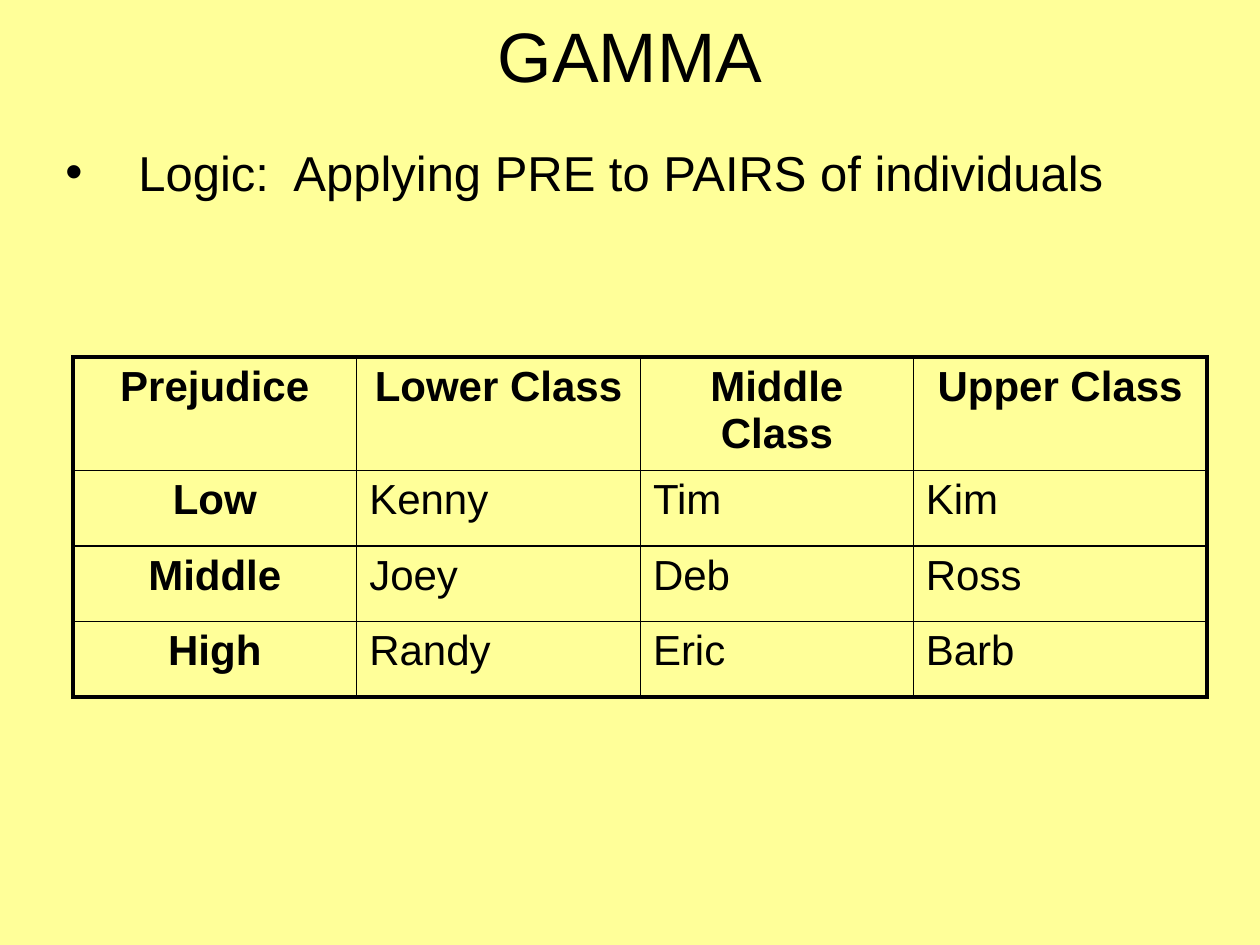
from dataclasses import dataclass

from lxml import etree
from pptx import Presentation
from pptx import util as u
from pptx.dml.color import RGBColor
from pptx.enum import text
from pptx.oxml import ns

FONT = "Arial"
INK = "000000"
PAPER = "FFFF99"
THIN, THICK = 1, 2.25

HEADERS = ["Prejudice", "Lower Class", "Middle Class", "Upper Class"]
ROWS = [
    ["Low", "Kenny", "Tim", "Kim"],
    ["Middle", "Joey", "Deb", "Ross"],
    ["High", "Randy", "Eric", "Barb"],
]
COLUMN_WIDTHS = [5.72, 5.72, 5.5, 5.92]
HEADER_HEIGHT, ROW_HEIGHT = 2.27, 1.52


@dataclass
class Area:
    left: float
    top: float
    width: float
    height: float

    def lengths(self) -> list[u.Length]:
        return [u.Cm(n) for n in (self.left, self.top, self.width, self.height)]


@dataclass
class Style:
    size: float
    bold: bool = False
    align: text.PP_ALIGN = text.PP_ALIGN.LEFT


def color(value: str) -> RGBColor:
    return RGBColor.from_string(value)


def add_child(parent, tag: str, **attributes: str):
    return etree.SubElement(parent, ns.qn(tag), attributes)


def write(frame, words: str, style: Style):
    """Fill the first paragraph of a text frame with one styled run."""
    para = frame.paragraphs[0]
    para.alignment = style.align
    span = para.add_run()
    span.text = words
    span.font.name = FONT
    span.font.size = u.Pt(style.size)
    span.font.bold = style.bold
    span.font.color.rgb = color(INK)
    return para


def space_before(para, percent: int) -> None:
    spacing = add_child(para._p.get_or_add_pPr(), "a:spcBef")
    add_child(spacing, "a:spcPct", val=str(percent * 1000))


def add_bullet(para, indent: u.Length) -> None:
    properties = para._p.get_or_add_pPr()
    properties.set("marL", str(indent))
    properties.set("indent", str(-indent))
    add_child(properties, "a:buFont", typeface=FONT)
    add_child(properties, "a:buChar", char="•")


def set_borders(cell, widths: dict[str, float]) -> None:
    properties = cell._tc.get_or_add_tcPr()
    for side, width in widths.items():
        line = add_child(properties, f"a:ln{side}", w=str(u.Pt(width)))
        fill = add_child(line, "a:solidFill")
        add_child(fill, "a:srgbClr", val=INK)


def add_grid(page, area: Area, rows: list[list[str]]) -> None:
    last_row, last_column = len(rows) - 1, len(rows[0]) - 1
    table = page.shapes.add_table(len(rows), len(rows[0]), *area.lengths()).table
    table.first_row = table.horz_banding = False
    for column, width in zip(table.columns, COLUMN_WIDTHS):
        column.width = u.Cm(width)
    for r, words_in_row in enumerate(rows):
        table.rows[r].height = u.Cm(ROW_HEIGHT if r else HEADER_HEIGHT)
        for c, words in enumerate(words_in_row):
            cell = table.cell(r, c)
            heading = r == 0 or c == 0
            align = text.PP_ALIGN.CENTER if heading else text.PP_ALIGN.LEFT
            para = write(cell.text_frame, words, Style(24, heading, align))
            space_before(para, 20)
            # Thick lines run only around the outside of the table
            set_borders(cell, {
                "L": THICK if c == 0 else THIN,
                "R": THICK if c == last_column else THIN,
                "T": THICK if r == 0 else THIN,
                "B": THICK if r == last_row else THIN,
            })
            cell.fill.background()


def main() -> None:
    deck = Presentation()
    deck.slide_width, deck.slide_height = u.Cm(25.4), u.Cm(19.05)
    page = deck.slides.add_slide(deck.slide_layouts[5])
    page.background.fill.solid()
    page.background.fill.fore_color.rgb = color(PAPER)

    # Title
    title = page.shapes.title
    title.left, title.top, title.width, title.height = Area(1.27, 0.43, 22.86, 1.35).lengths()
    title.text_frame.auto_size = text.MSO_AUTO_SIZE.NONE
    title.text_frame.vertical_anchor = text.MSO_ANCHOR.MIDDLE
    write(title.text_frame, "GAMMA", Style(40, align=text.PP_ALIGN.CENTER))

    # Bullet line
    box = page.shapes.add_textbox(*Area(1.07, 2.74, 22.86, 8.46).lengths())
    box.text_frame.word_wrap = True
    para = write(box.text_frame, "Logic:  Applying PRE to PAIRS of individuals", Style(28))
    space_before(para, 20)
    add_bullet(para, u.Cm(1.47))

    # Prejudice by class
    height = HEADER_HEIGHT + ROW_HEIGHT * len(ROWS)
    add_grid(page, Area(1.47, 7.2, sum(COLUMN_WIDTHS), height), [HEADERS, *ROWS])

    deck.save("out.pptx")


if __name__ == "__main__":
    main()
